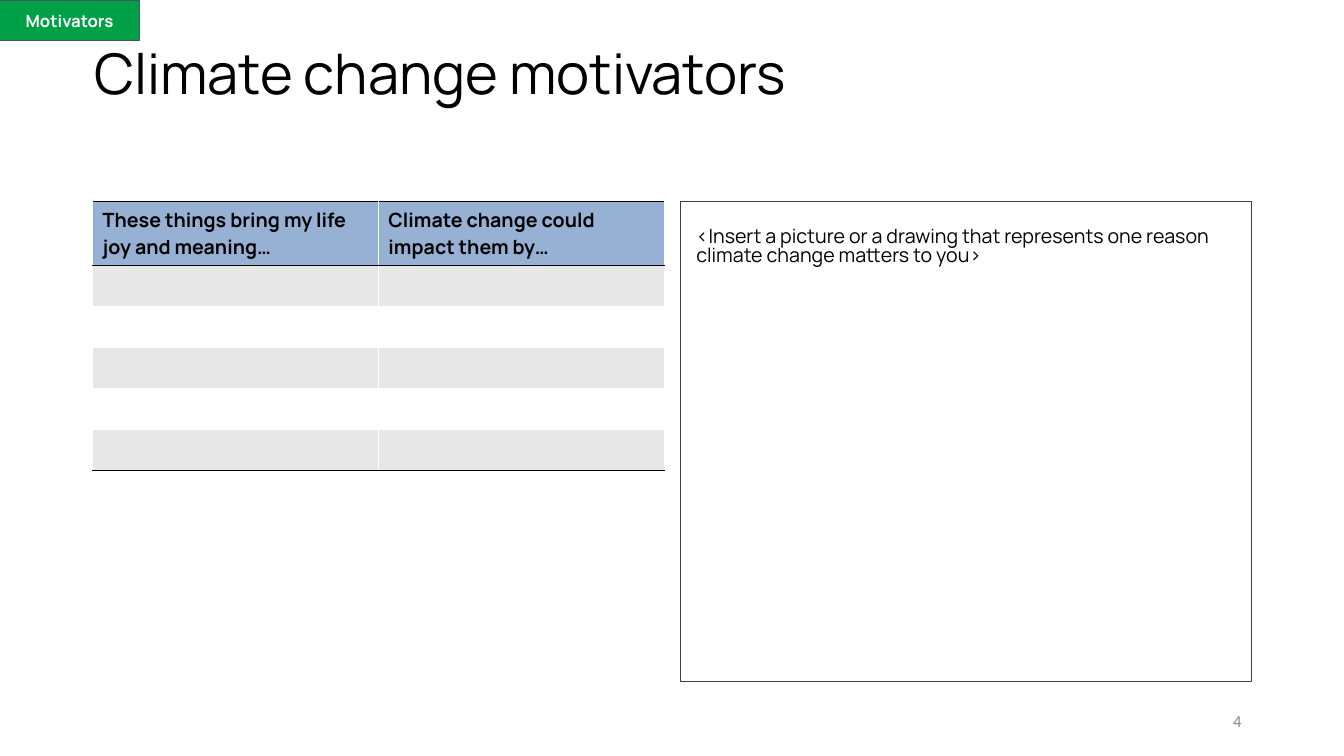
from dataclasses import dataclass

from lxml import etree
from pptx import Presentation
from pptx.dml.color import RGBColor
from pptx.enum import shapes, text
from pptx.oxml import ns
from pptx.util import Pt

TITLE = "Climate change motivators"
TAG = "Motivators"
HEADINGS = ["These things bring my life joy and meaning…", "Climate change could impact them by…"]
EMPTY_ROWS = 5
PROMPT = "<Insert a picture or a drawing that represents one reason climate change matters to you>"
PAGE_NUMBER = "4"


@dataclass(frozen=True)
class Theme:
    font: str = "Manrope"
    number_font: str = "Calibri"
    black: str = "000000"
    white: str = "FFFFFF"
    header: str = "97B1D5"
    band: str = "E7E7E7"
    green: str = "00A047"
    tag_line: str = "44546A"
    box_line: str = "3F3F3F"
    grey: str = "888888"
    title_size: float = 40
    body_size: float = 14
    small_size: float = 12
    line_width: float = 0.75
    border_width: float = 0.5


THEME = Theme()
SLIDE_WIDTH, SLIDE_HEIGHT = 960, 540
COLUMN_LEFT, COLUMN_TOP, COLUMN_WIDTH, GUTTER = 66.2, 144, 408.2, 11.6
BOX_LEFT = COLUMN_LEFT + COLUMN_WIDTH + GUTTER
BOX_HEIGHT = 342.7
ROW_HEIGHT = 29.2


def place(shape, left, top, width, height):
    shape.left, shape.top, shape.width, shape.height = map(Pt, (left, top, width, height))


def write(frame, wording, size, color, font=THEME.font, bold=False,
          align=text.PP_ALIGN.LEFT, spacing=None):
    frame.text = wording
    frame.word_wrap = True
    paragraph = frame.paragraphs[0]
    paragraph.alignment = align
    paragraph.line_spacing = spacing
    run_font = paragraph.runs[0].font
    run_font.name, run_font.size, run_font.bold = font, Pt(size), bold
    run_font.color.rgb = RGBColor.from_string(color)


def add_rectangle(slide, bounds, line, fill=None):
    shape = slide.shapes.add_shape(shapes.MSO_SHAPE.RECTANGLE, *map(Pt, bounds))
    shape.shadow.inherit = False
    if fill:
        shape.fill.solid()
        shape.fill.fore_color.rgb = RGBColor.from_string(fill)
    else:
        shape.fill.background()
    shape.line.color.rgb = RGBColor.from_string(line)
    shape.line.width = Pt(THEME.line_width)
    return shape


def set_borders(cell, borders):
    """Draw the (side, colour) borders, given in the order L, R, T, B."""
    properties = cell._tc.get_or_add_tcPr()
    for position, (side, color) in enumerate(borders):
        line = etree.Element(ns.qn(f"a:ln{side}"), w=str(Pt(THEME.border_width)))
        solid = etree.SubElement(line, ns.qn("a:solidFill"))
        etree.SubElement(solid, ns.qn("a:srgbClr"), val=color)
        properties.insert(position, line)


def add_motivator_table(slide):
    row_count, column_count = EMPTY_ROWS + 1, len(HEADINGS)
    frame = slide.shapes.add_table(
        row_count, column_count, Pt(COLUMN_LEFT), Pt(COLUMN_TOP),
        Pt(COLUMN_WIDTH), Pt(ROW_HEIGHT * row_count))
    table = frame.table
    edge_colors = [THEME.black, THEME.black] + [THEME.white] * (EMPTY_ROWS - 1) + [THEME.black]
    for row in range(row_count):
        table.rows[row].height = Pt(ROW_HEIGHT)
        fill = THEME.header if row == 0 else THEME.band if row % 2 else THEME.white
        for column in range(column_count):
            cell = table.cell(row, column)
            cell.fill.solid()
            cell.fill.fore_color.rgb = RGBColor.from_string(fill)
            inner_side = "R" if column == 0 else "L"
            set_borders(cell, [(inner_side, THEME.white), ("T", edge_colors[row]),
                               ("B", edge_colors[row + 1])])
            if row == 0:
                write(cell.text_frame, HEADINGS[column], THEME.body_size, THEME.black, bold=True)


def add_prompt_box(slide):
    box = add_rectangle(slide, (BOX_LEFT, COLUMN_TOP, COLUMN_WIDTH, BOX_HEIGHT), THEME.box_line)
    frame = box.text_frame
    write(frame, PROMPT, THEME.body_size, THEME.black, spacing=0.8)
    frame.vertical_anchor = text.MSO_ANCHOR.TOP
    frame.margin_left, frame.margin_top = Pt(11.5), Pt(19)


def add_page_number(slide):
    box = slide.shapes.add_textbox(Pt(678), Pt(500.5), Pt(216), Pt(28.75))
    write(box.text_frame, PAGE_NUMBER, THEME.small_size, THEME.grey,
          font=THEME.number_font, align=text.PP_ALIGN.RIGHT)
    box.text_frame.vertical_anchor = text.MSO_ANCHOR.MIDDLE


def add_tag(slide):
    tag = add_rectangle(slide, (0, 0, 99.5, 29), THEME.tag_line, THEME.green)
    write(tag.text_frame, TAG, THEME.small_size, THEME.white, bold=True,
          align=text.PP_ALIGN.CENTER)
    tag.text_frame.vertical_anchor = text.MSO_ANCHOR.MIDDLE


def main():
    presentation = Presentation()
    presentation.slide_width, presentation.slide_height = Pt(SLIDE_WIDTH), Pt(SLIDE_HEIGHT)
    slide = presentation.slides.add_slide(presentation.slide_layouts[5])
    title = slide.shapes.title
    place(title, 60, 29, 844.5, 104.4)
    write(title.text_frame, TITLE, THEME.title_size, THEME.black, spacing=0.9)
    title.text_frame.vertical_anchor = text.MSO_ANCHOR.TOP
    add_motivator_table(slide)
    add_prompt_box(slide)
    add_page_number(slide)
    add_tag(slide)
    presentation.save("out.pptx")


if __name__ == "__main__":
    main()
